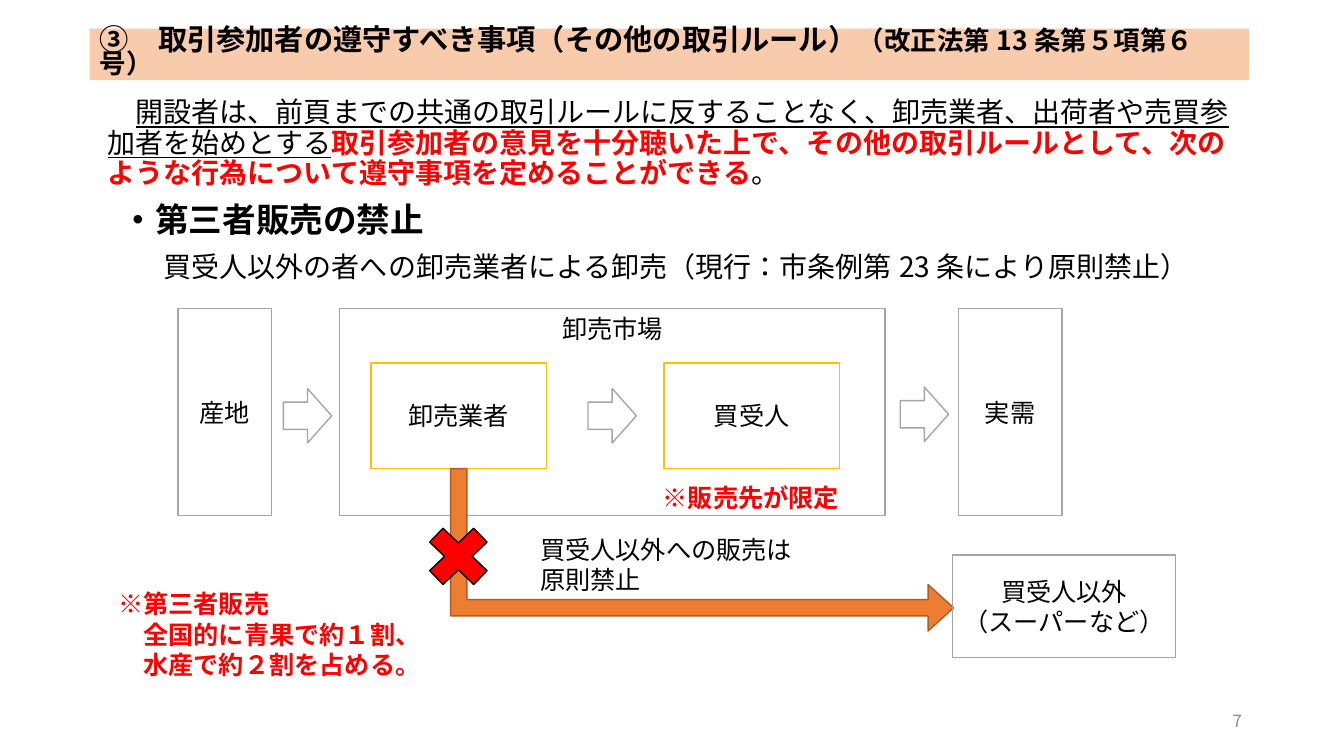
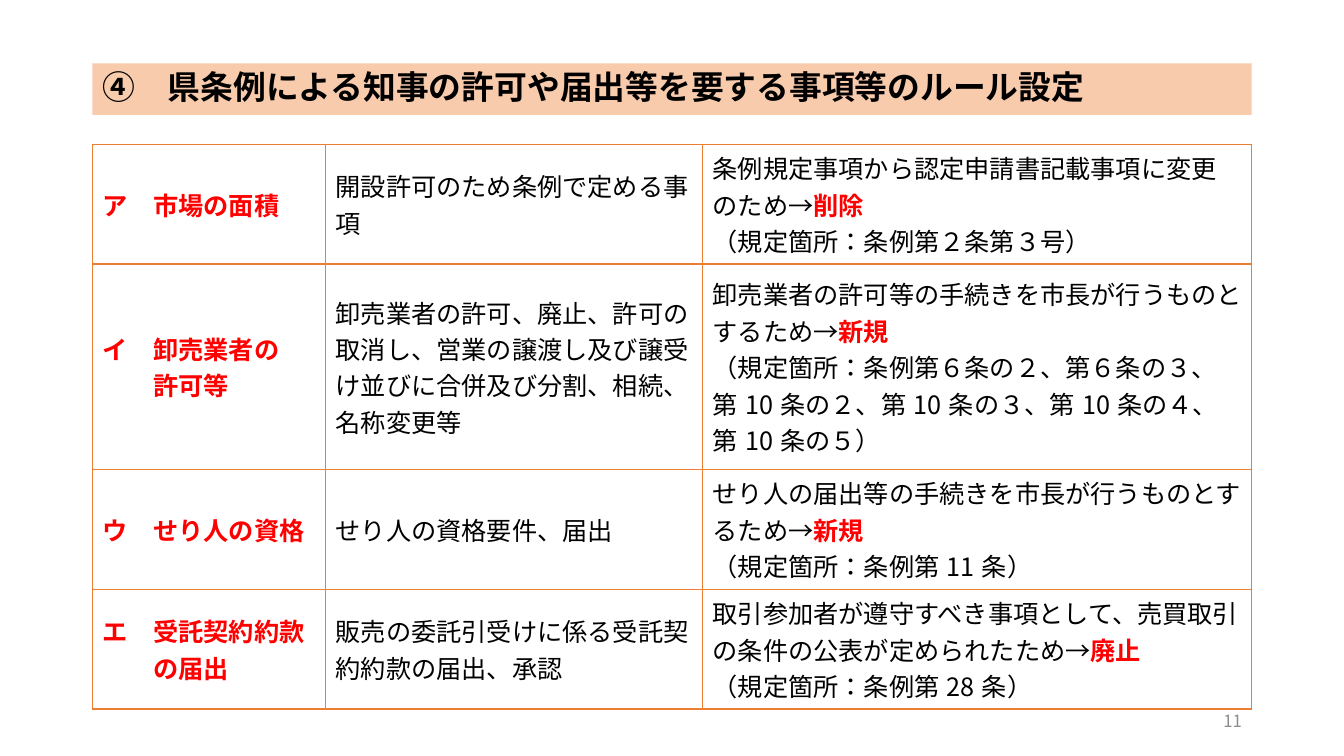
from lxml.etree import SubElement
from pptx import Presentation
from pptx.dml.color import RGBColor
from pptx.enum.lang import MSO_LANGUAGE_ID
from pptx.enum.shapes import MSO_SHAPE
from pptx.enum.text import MSO_ANCHOR, PP_ALIGN
from pptx.oxml.ns import qn
from pptx.util import Inches, Pt

FONT = "Noto Sans CJK JP"
BLACK = RGBColor(0x00, 0x00, 0x00)
WHITE = RGBColor(0xFF, 0xFF, 0xFF)
RED = RGBColor(0xFF, 0x00, 0x00)
GRAY = RGBColor(0xA5, 0xA5, 0xA5)
NUMBER_GRAY = RGBColor(0x8C, 0x8C, 0x8C)
GOLD = RGBColor(0xFF, 0xC0, 0x00)
ORANGE = RGBColor(0xED, 0x7D, 0x31)
DARK_ORANGE = RGBColor(0xAF, 0x5C, 0x24)
PEACH = RGBColor(0xF8, 0xCB, 0xAD)
ALERT = {"color": RED, "bold": True}

SLIDE_HEIGHT = Inches(7.5)
SLIDE_WIDTH = SLIDE_HEIGHT * 16 // 9
CONTENT_WIDTH = 86.25  # all places are percentages of the slide's size

TABLE_COLUMNS = [17.33, 28.05, 40.87]
THREE_LINES, FIVE_LINES = 15.84, 27.2
TABLE_ROWS = [THREE_LINES, FIVE_LINES, THREE_LINES, THREE_LINES]
# item lines, current rule, reason, outcome, clause
RULES = [
    (["ア　市場の面積"], "開設許可のため条例で定める事項",
     "条例規定事項から認定申請書記載事項に変更のため→", "削除",
     "（規定箇所：条例第２条第３号）"),
    (["イ　卸売業者の", "許可等"],
     "卸売業者の許可、廃止、許可の取消し、営業の譲渡し及び譲受け並びに合併及び分割、相続、名称変更等",
     "卸売業者の許可等の手続きを市長が行うものとするため→", "新規",
     "（規定箇所：条例第６条の２、第６条の３、第10条の２、第10条の３、第10条の４、第10条の５）"),
    (["ウ　せり人の資格"], "せり人の資格要件、届出",
     "せり人の届出等の手続きを市長が行うものとするため→", "新規",
     "（規定箇所：条例第11条）"),
    (["エ　受託契約約款", "の届出"], "販売の委託引受けに係る受託契約約款の届出、承認",
     "取引参加者が遵守すべき事項として、売買取引の条件の公表が定められたため→", "廃止",
     "（規定箇所：条例第28条）"),
]


def across(share):
    return round(SLIDE_WIDTH * share / 100)


def down(share):
    return round(SLIDE_HEIGHT * share / 100)


def area(left, top, width, height):
    return across(left), down(top), across(width), down(height)


def style_span(span, size, color, bold, underline):
    font = span.font
    font.size, font.bold, font.underline = Pt(size), bold, underline
    font.color.rgb = color
    font.name = FONT
    font.language_id = MSO_LANGUAGE_ID.JAPANESE
    font._element.find(qn("a:latin")).addnext(
        SubElement(font._element, qn("a:ea"), typeface=FONT))


def write(frame, *spans, size=18, color=BLACK, bold=False, underline=False,
          align=PP_ALIGN.LEFT, spacing=1.0, before=0, indent=0):
    """Add a paragraph; a span is a string or a (string, format) pair."""
    para = frame.paragraphs[0]
    if para.runs:
        para = frame.add_paragraph()
    para.alignment, para.line_spacing = align, spacing
    para.space_before = Pt(before)
    if indent:
        para._p.get_or_add_pPr().set("indent", str(Pt(indent)))
    base = {"size": size, "color": color, "bold": bold, "underline": underline}
    for item in spans:
        text, changes = (item, {}) if isinstance(item, str) else item
        span = para.add_run()
        span.text = text
        style_span(span, **{**base, **changes})


def add_text(slide, place, anchor=MSO_ANCHOR.TOP):
    frame = slide.shapes.add_textbox(*area(*place)).text_frame
    frame.word_wrap = True
    frame.vertical_anchor = anchor
    return frame


def add_box(slide, place, kind=MSO_SHAPE.RECTANGLE, fill=None, line=None,
            anchor=MSO_ANCHOR.MIDDLE):
    box = slide.shapes.add_shape(kind, *area(*place))
    box.shadow.inherit = False
    if fill is None:
        box.fill.background()
    else:
        box.fill.solid()
        box.fill.fore_color.rgb = fill
    if line is None:
        box.line.fill.background()
    else:
        box.line.color.rgb = line
        box.line.width = Pt(1)
    box.text_frame.word_wrap = True
    box.text_frame.vertical_anchor = anchor
    return box


def add_labelled_box(slide, place, *lines, line=GRAY, anchor=MSO_ANCHOR.MIDDLE):
    frame = add_box(slide, place, line=line, anchor=anchor).text_frame
    for text in lines:
        write(frame, text, align=PP_ALIGN.CENTER)


def add_page(deck, number, left, top, *title, size, spacing):
    """Add a slide with its title band and page number."""
    slide = deck.slides.add_slide(deck.slide_layouts[6])
    band = add_box(slide, (left, top, CONTENT_WIDTH, 6.8), fill=PEACH)
    write(band.text_frame, *title, size=size, bold=True, spacing=spacing)
    footer = add_text(slide, (70.65, 92.67, 22.5, 5.33), MSO_ANCHOR.MIDDLE)
    write(footer, number, size=12, color=NUMBER_GRAY, align=PP_ALIGN.RIGHT)
    return slide


def add_explanation(slide):
    frame = add_text(slide, (7.28, 12.4, CONTENT_WIDTH, 82.5))
    rhythm = {"spacing": 0.9, "before": 10}
    write(frame,
          ("開設者は、前頁までの共通の取引ルールに反することなく、卸売業者、出荷者や売買参加者を始めとする",
           {"underline": True}),
          ("取引参加者の意見を十分聴いた上で、その他の取引ルールとして、次のような行為について遵守事項を定めることができる",
           ALERT),
          "。", size=20, indent=20, **rhythm)
    write(frame, "・第三者販売の禁止", size=24, bold=True, indent=10, **rhythm)
    write(frame, "買受人以外の者への卸売業者による卸売（現行：市条例第23条により原則禁止）",
          size=20, indent=40, **rhythm)


def add_sales_flow(slide):
    top, height = 40.8, 27.4
    add_labelled_box(slide, (25.28, top, 40.58, height), "卸売市場",
                     anchor=MSO_ANCHOR.TOP)
    add_labelled_box(slide, (13.25, top, 6.98, height), "産地")
    add_labelled_box(slide, (71.3, top, 7.72, height), "実需")
    for left, trader in ((27.6, "卸売業者"), (49.4, "買受人")):
        add_labelled_box(slide, (left, 48, 13.05, 14), trader, line=GOLD)
    for left, arrow_top in ((21.08, 51.4), (43.75, 51.4), (66.98, 51.2)):
        add_box(slide, (left, arrow_top, 3.6, 7.2), MSO_SHAPE.RIGHT_ARROW,
                WHITE, GRAY)

    detour = add_box(slide, (46.2, 39.47, 12.08, 66.53),
                     MSO_SHAPE.BENT_UP_ARROW, ORANGE, DARK_ORANGE)
    detour.rotation = 90
    for index, value in enumerate((0.1, 0.143, 0.157)):
        detour.adjustments[index] = value
    add_labelled_box(slide, (70.88, 73.4, 16.6, 13.6),
                     "買受人以外", "（スーパーなど）")
    add_box(slide, (30.96, 68.2, 6.3, 10.8), MSO_SHAPE.MATH_MULTIPLY, RED, BLACK)


def add_flow_notes(slide):
    write(add_text(slide, (39.45, 70.05, 21.82, 9.47)),
          "買受人以外への販売は原則禁止")
    write(add_text(slide, (48.58, 63.2, 17.02, 5.33)), "※販売先が限定", **ALERT)
    share = add_text(slide, (8.05, 77.2, 23.85, 13.47))
    write(share, "※第三者販売", **ALERT)
    for text in ("全国的に青果で約１割、", "水産で約２割を占める。"):
        write(share, text, indent=18, **ALERT)


def outline_cell(cell):
    properties = cell._tc.get_or_add_tcPr()
    for position, side in enumerate(("a:lnL", "a:lnR", "a:lnT", "a:lnB")):
        edge = SubElement(properties, qn(side), w=str(Pt(1)))
        fill = SubElement(edge, qn("a:solidFill"))
        SubElement(fill, qn("a:srgbClr"), val=str(ORANGE))
        properties.insert(position, edge)


def add_rule_table(slide):
    place = area(6.9, 19.07, sum(TABLE_COLUMNS), sum(TABLE_ROWS))
    table = slide.shapes.add_table(len(TABLE_ROWS), len(TABLE_COLUMNS), *place).table
    table.first_row = table.horz_banding = False
    for column, share in zip(table.columns, TABLE_COLUMNS):
        column.width = across(share)
    for row, share in zip(table.rows, TABLE_ROWS):
        row.height = down(share)
    for cell in table.iter_cells():
        cell.vertical_anchor = MSO_ANCHOR.MIDDLE
        cell.fill.solid()
        cell.fill.fore_color.rgb = WHITE
        outline_cell(cell)
    for row, (item, rule, reason, outcome, clause) in zip(table.rows, RULES):
        item_frame, rule_frame, change_frame = [cell.text_frame for cell in row.cells]
        for index, text in enumerate(item):
            write(item_frame, text, indent=36 * index, **ALERT)
        write(rule_frame, rule)
        write(change_frame, reason, (outcome, ALERT))
        write(change_frame, clause)


def main():
    deck = Presentation()
    deck.slide_width, deck.slide_height = SLIDE_WIDTH, SLIDE_HEIGHT

    trading = add_page(deck, "7", 6.68, 3.8,
                       "③　取引参加者の遵守すべき事項（その他の取引ルール）",
                       ("（改正法第13条第５項第６号）", {"size": 18.9}),
                       size=20.9, spacing=0.7)
    add_explanation(trading)
    add_sales_flow(trading)
    add_flow_notes(trading)

    ordinance = add_page(deck, "11", 6.88, 8.4,
                         "④　県条例による知事の許可や届出等を要する事項等のルール設定",
                         size=23.4, spacing=0.9)
    add_rule_table(ordinance)
    deck.save("out.pptx")


if __name__ == "__main__":
    main()
